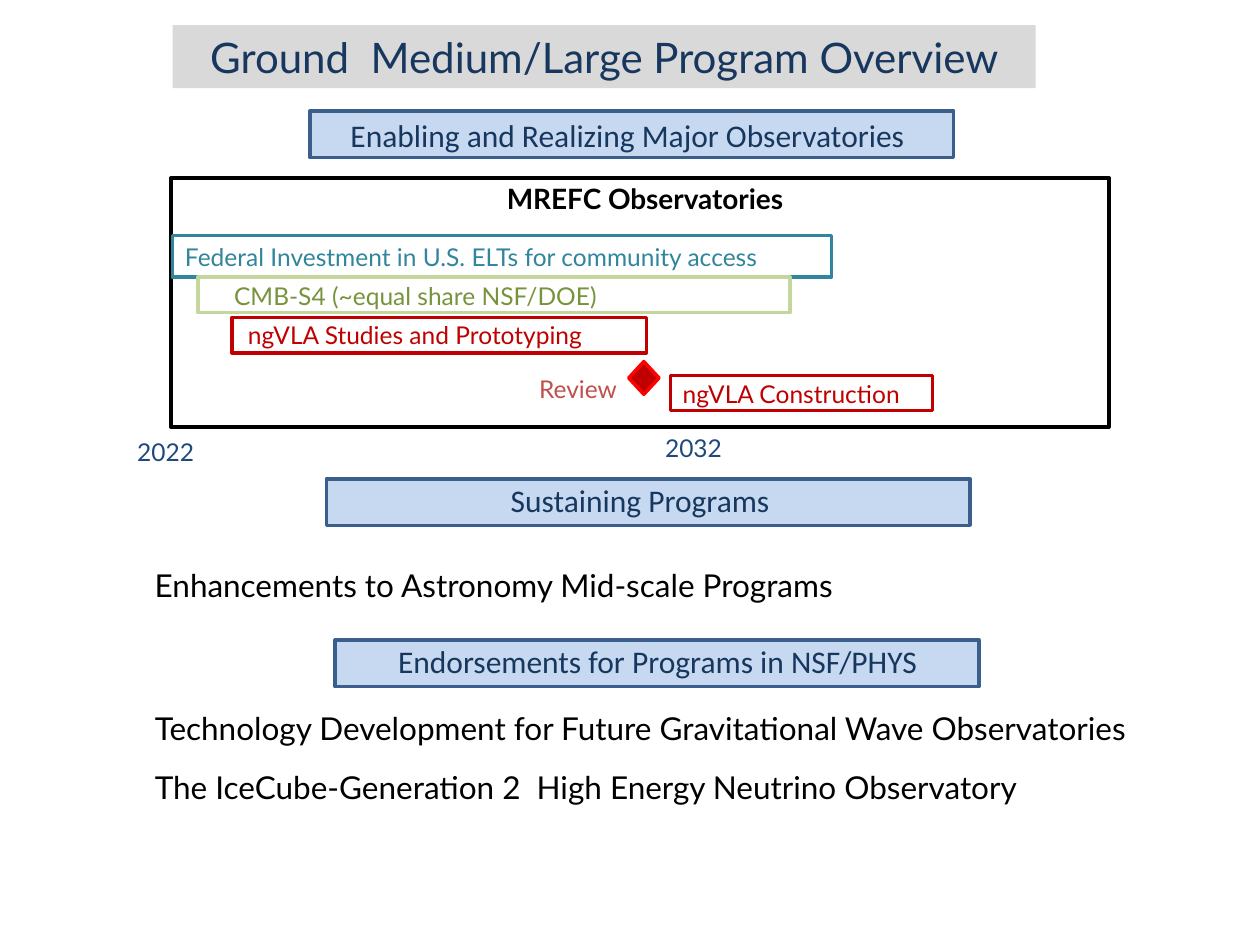
from pptx import Presentation
from pptx import util as u
from pptx.dml.color import RGBColor
from pptx.enum import shapes, text

PX = 9144  # EMU per px, 100 px to the inch
HEX = {
    "black": "000000", "white": "FFFFFF", "gray": "D9D9D9",
    "navy": "17375E", "blue": "1F497D", "edge": "3A5F8C", "pale": "C6D9F1",
    "teal": "31859C", "green": "77933C", "lime": "C3D69B",
    "dark": "C00000", "red": "FF0000", "rose": "C0504D",
}
KIND = shapes.MSO_SHAPE
LEFT, MID = text.PP_ALIGN.LEFT, text.PP_ALIGN.CENTER


class Deck:
    def __init__(self):
        self.prs = Presentation()
        self.prs.slide_width, self.prs.slide_height = 1000 * PX, 750 * PX
        self.slide = self.prs.slides.add_slide(self.prs.slide_layouts[5])

    def color(self, name):
        return RGBColor.from_string(HEX[name])

    def words(self, shape, words, size, color, font="Lato", align=LEFT,
              bold=False, wrap=True, after=0):
        frame = shape.text_frame
        frame.text = words
        frame.word_wrap = wrap
        frame.auto_size = text.MSO_AUTO_SIZE.NONE
        frame.vertical_anchor = text.MSO_ANCHOR.TOP
        for para in frame.paragraphs:
            para.alignment = align
            para.space_after = u.Pt(after)
            for run in para.runs:
                run.font.name, run.font.size = font, u.Pt(size)
                run.font.bold = bold
                run.font.color.rgb = self.color(color)

    def title(self, box, words):
        shape = self.slide.shapes.title
        shape.left, shape.top, shape.width, shape.height = [n * PX for n in box]
        shape.fill.solid()
        shape.fill.fore_color.rgb = self.color("gray")
        self.words(shape, words, 24, "navy", align=MID)

    def shape(self, box, line, fill=None, width=2, kind=KIND.RECTANGLE):
        shape = self.slide.shapes.add_shape(kind, *[n * PX for n in box])
        shape.shadow.inherit = False
        if fill:
            shape.fill.solid()
            shape.fill.fore_color.rgb = self.color(fill)
        else:
            shape.fill.background()
        shape.line.color.rgb = self.color(line)
        shape.line.width = u.Pt(width)
        return shape

    def label(self, box, words, size, color, **style):
        shape = self.slide.shapes.add_textbox(*[n * PX for n in box])
        self.words(shape, words, size, color, **style)


def main():
    deck = Deck()
    deck.title((137, 20, 685, 50), "Ground  Medium/Large Program Overview")

    # Section banners
    for left, top, box, words in (
        (246, 88, (259, 87, 478, 40), "Enabling and Realizing Major Observatories"),
        (259, 380, (154, 377, 708, 40), "Sustaining Programs"),
        (266, 508, (168, 505, 708, 40), "Endorsements for Programs in NSF/PHYS"),
    ):
        deck.shape((left, top, 511, 37), "edge", "pale")
        deck.label(box, words, 18, "navy", font="Calibri", align=MID)

    # Timeline frame
    deck.shape((136, 141, 744, 198), "black", "white", 2.25)
    deck.label((140, 139, 744, 37), "MREFC Observatories", 16, "black",
               align=MID, bold=True)

    # Project bars
    bar = deck.shape((137, 187, 523, 33), "teal")
    deck.words(bar, "Federal Investment in U.S. ELTs for community access",
               14, "teal")
    for bar, line, box, words, color in (
        ((157, 220, 470, 28), "lime", (176, 218, 500, 34),
         "CMB-S4 (~equal share NSF/DOE)", "green"),
        ((184, 252, 329, 28), "dark", (187, 249, 400, 34),
         "ngVLA Studies and Prototyping", "dark"),
        ((532, 298, 208, 28), "dark", (532, 296, 400, 34),
         "ngVLA Construction", "dark"),
    ):
        deck.shape(bar, line)
        deck.label(box, words, 14, color)

    # Review milestone and years
    deck.shape((499, 287, 24, 26), "red", "dark", kind=KIND.DIAMOND)
    for box, words, color in (
        ((418, 292, 83, 34), "Review", "rose"),
        ((99, 342, 69, 34), "2022", "blue"),
        ((518, 339, 69, 34), "2032", "blue"),
    ):
        deck.label(box, words, 14, color, wrap=False)

    # Program statements
    deck.label((113, 444, 804, 67),
               "Enhancements to Astronomy Mid-scale Programs", 18, "black")
    deck.label((113, 558, 842, 88),
               "Technology Development for Future Gravitational Wave Observatories\n"
               "The IceCube-Generation 2  High Energy Neutrino Observatory",
               18, "black", after=12)

    deck.prs.save("out.pptx")


if __name__ == "__main__":
    main()
